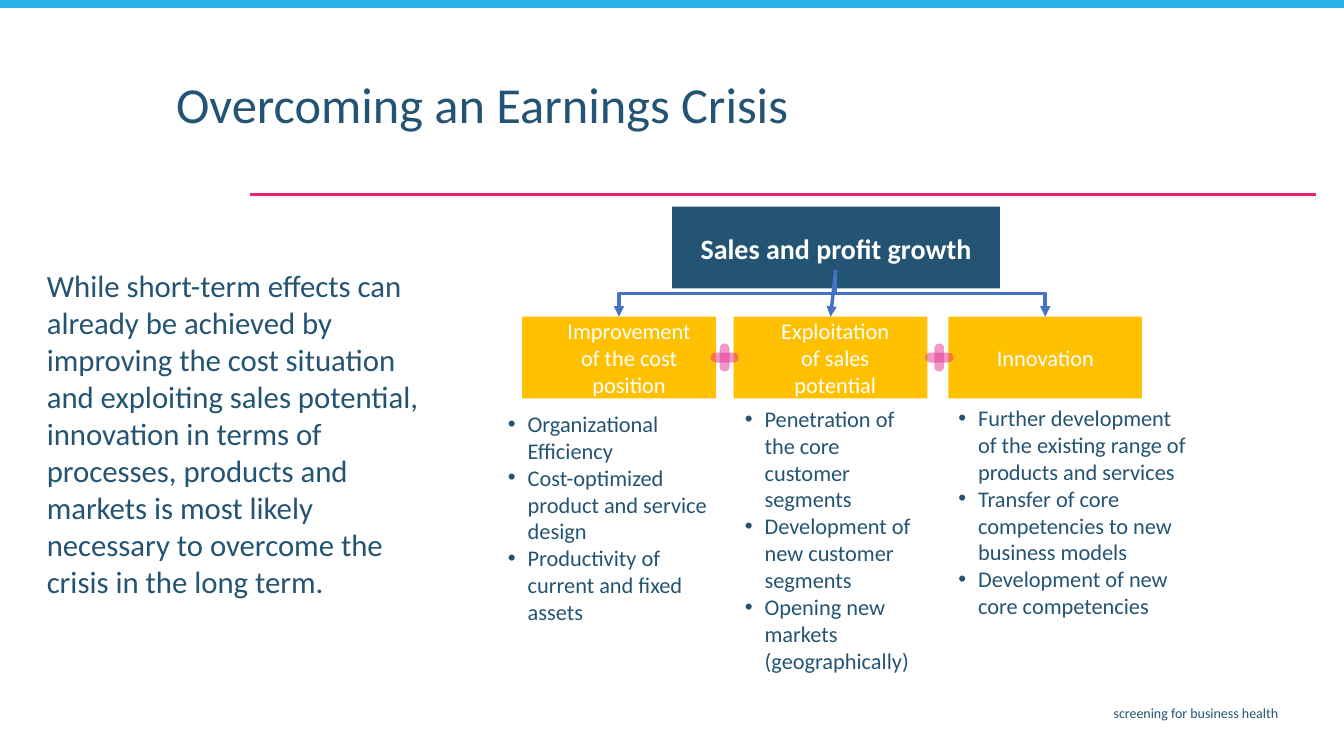
from lxml import etree
from pptx import Presentation
from pptx.dml.color import RGBColor as RGB
from pptx.enum.shapes import MSO_CONNECTOR as LINK, MSO_SHAPE as SHAPE
from pptx.enum.text import MSO_ANCHOR as ANCHOR, PP_ALIGN as ALIGN
from pptx.oxml.ns import qn
from pptx.util import Cm, Pt

COLORS = {
    "sky": "29B3E8",
    "rule": "EC2179",
    "navy": "245473",
    "amber": "FFC000",
    "plus": "E53292",
    "arrow": "4472C4",
    "white": "FFFFFF",
}
BODY = {"name": "Calibri", "size": Pt(22), "bold": False}
TITLE = {**BODY, "size": Pt(36)}
GOAL = {**BODY, "size": Pt(20), "bold": True}
DETAIL = {**BODY, "size": Pt(16)}
FOOTER = {**BODY, "size": Pt(10)}

INTRO = (
    "While short-term effects can already be achieved by improving the cost "
    "situation and exploiting sales potential, innovation in terms of processes, "
    "products and markets is most likely necessary to overcome the crisis in the "
    "long term."
)
LEVERS = [
    {
        "left": 0,
        "label": (0.79, 3.81, "Improvement of the cost position"),
        "list": (-0.61, 2.23, 5.84, 5.74),
        "measures": [
            "Organizational Efficiency",
            "Cost-optimized product and service design",
            "Productivity of current and fixed assets",
        ],
    },
    {
        "left": 5.33,
        "label": (0.91, 3.3, "Exploitation of sales potential"),
        "list": (0.03, 2.1, 4.88, 7.09),
        "measures": [
            "Penetration of the core customer segments",
            "Development of new customer segments",
            "Opening new markets (geographically)",
        ],
    },
    {
        "left": 10.74,
        "label": (0.91, 3.07, "Innovation"),
        "list": (0, 2.08, 6.32, 5.74),
        "measures": [
            "Further development of the existing range of products and services",
            "Transfer of core competencies to new business models",
            "Development of new core competencies",
        ],
    },
]
LEVER_W, LEVER_H = 4.88, 2.06


def add_block(slide, box, color, kind=SHAPE.RECTANGLE):
    block = slide.shapes.add_shape(kind, *map(Cm, box))
    block.shadow.inherit = False
    block.fill.solid()
    block.fill.fore_color.rgb = RGB.from_string(COLORS[color])
    block.line.fill.background()
    return block


def add_words(slide, box, lines, style, color="navy", align=ALIGN.LEFT,
              anchor=ANCHOR.TOP, bullet=False, spacing=None):
    frame = slide.shapes.add_textbox(*map(Cm, box)).text_frame
    frame.word_wrap = True
    frame.vertical_anchor = anchor
    for index, line in enumerate(lines):
        paragraph = frame.paragraphs[0] if index == 0 else frame.add_paragraph()
        paragraph.alignment = align
        if spacing:
            paragraph.line_spacing = spacing
        if bullet:
            props = paragraph._p.get_or_add_pPr()
            props.set("marL", str(Cm(0.5)))
            props.set("indent", str(Cm(-0.5)))
            etree.SubElement(props, qn("a:buFont")).set("typeface", "Arial")
            etree.SubElement(props, qn("a:buChar")).set("char", "•")
        run = paragraph.add_run()
        run.text = line
        for attribute, value in style.items():
            setattr(run.font, attribute, value)
        run.font.color.rgb = RGB.from_string(COLORS[color])


def add_link(slide, kind, start, end, color, width, arrow=False):
    link = slide.shapes.add_connector(kind, *map(Cm, (*start, *end)))
    link.line.color.rgb = RGB.from_string(COLORS[color])
    link.line.width = Pt(width)
    if arrow:
        line = link.line._get_or_add_ln()
        etree.SubElement(line, qn("a:headEnd")).set("type", "triangle")
    etree.SubElement(link._element.spPr, qn("a:effectLst"))
    return link


def add_branch(slide, tip, trunk):
    side = 1 if tip[0] > trunk[0] else -1
    center_x, center_y = (tip[0] + trunk[0]) / 2, (tip[1] + trunk[1]) / 2
    half_w, half_h = (tip[1] - trunk[1]) / 2, abs(tip[0] - trunk[0]) / 2
    branch = add_link(
        slide, LINK.ELBOW,
        (center_x - side * half_w, center_y + half_h),
        (center_x + side * half_w, center_y - half_h),
        "arrow", 2.5, arrow=True,
    )
    turn = 270 if side > 0 else 90
    branch._element.spPr.find(qn("a:xfrm")).set("rot", str(turn * 60000))


def add_plus(slide, center_x, center_y):
    width, height = 0.71, 0.25
    for turn in (90, 180):
        box = (center_x - width / 2, center_y - height / 2, width, height)
        bar = add_block(slide, box, "plus", SHAPE.ROUNDED_RECTANGLE)
        bar.adjustments[0] = 0.5
        bar.rotation = turn
        tint = bar._element.spPr.find(f".//{qn('a:srgbClr')}")
        etree.SubElement(tint, qn("a:alpha")).set("val", "50000")


def add_frame(slide, width, height):
    add_link(slide, LINK.STRAIGHT, (width - 0.7, 4.9), (6.3, 4.9), "rule", 1.5)
    add_block(slide, (0, -0.05, width, 0.25), "sky")
    add_words(slide, (width - 24.6, height - 1.42, 23.19, 0.74),
              ["screening for business health"], FOOTER, align=ALIGN.RIGHT)


def add_goal(slide, left, top):
    add_block(slide, (left, top, 8.26, 2.06), "navy")
    add_words(slide, (left + 0.18, top + 0.48, 7.9, 1.12),
              ["Sales and profit growth"], GOAL, "white",
              ALIGN.CENTER, ANCHOR.MIDDLE)


def add_lever(slide, left, top, lever):
    add_block(slide, (left, top, LEVER_W, LEVER_H), "amber")
    shift, width, label = lever["label"]
    add_words(slide, (left + shift, top - 0.12, width, 2.31), [label],
              DETAIL, "white", ALIGN.CENTER, ANCHOR.MIDDLE)
    shift, drop, width, height = lever["list"]
    add_words(slide, (left + shift, top + drop, width, height),
              lever["measures"], DETAIL, bullet=True)


def add_growth_tree(slide, left, top):
    add_goal(slide, left + 3.78, top)
    lever_top = top + 2.77
    trunk = (left + 7.9, top + 1.6)
    for lever in LEVERS:
        add_lever(slide, left + lever["left"], lever_top, lever)
    for lever in LEVERS:
        tip = (left + lever["left"] + LEVER_W / 2, lever_top)
        if abs(tip[0] - trunk[0]) < 1:
            add_link(slide, LINK.STRAIGHT, tip, trunk, "arrow", 2.5, arrow=True)
        else:
            add_branch(slide, tip, trunk)
    for lever in LEVERS[1:]:
        add_plus(slide, left + lever["left"] - 0.23, lever_top + LEVER_H / 2)


def main():
    deck = Presentation()
    width, height = 33.87, 19.05
    deck.slide_width, deck.slide_height = Cm(width), Cm(height)
    slide = deck.slides.add_slide(deck.slide_layouts[6])
    add_frame(slide, width, height)
    add_words(slide, (4.19, 1.88, 24.59, 1.93),
              ["Overcoming an Earnings Crisis"], TITLE, spacing=0.9)
    add_words(slide, (0.93, 6.6, 9.86, 8.69), [INTRO], BODY)
    add_growth_tree(slide, 13.16, 5.21)
    deck.save("out.pptx")


if __name__ == "__main__":
    main()
